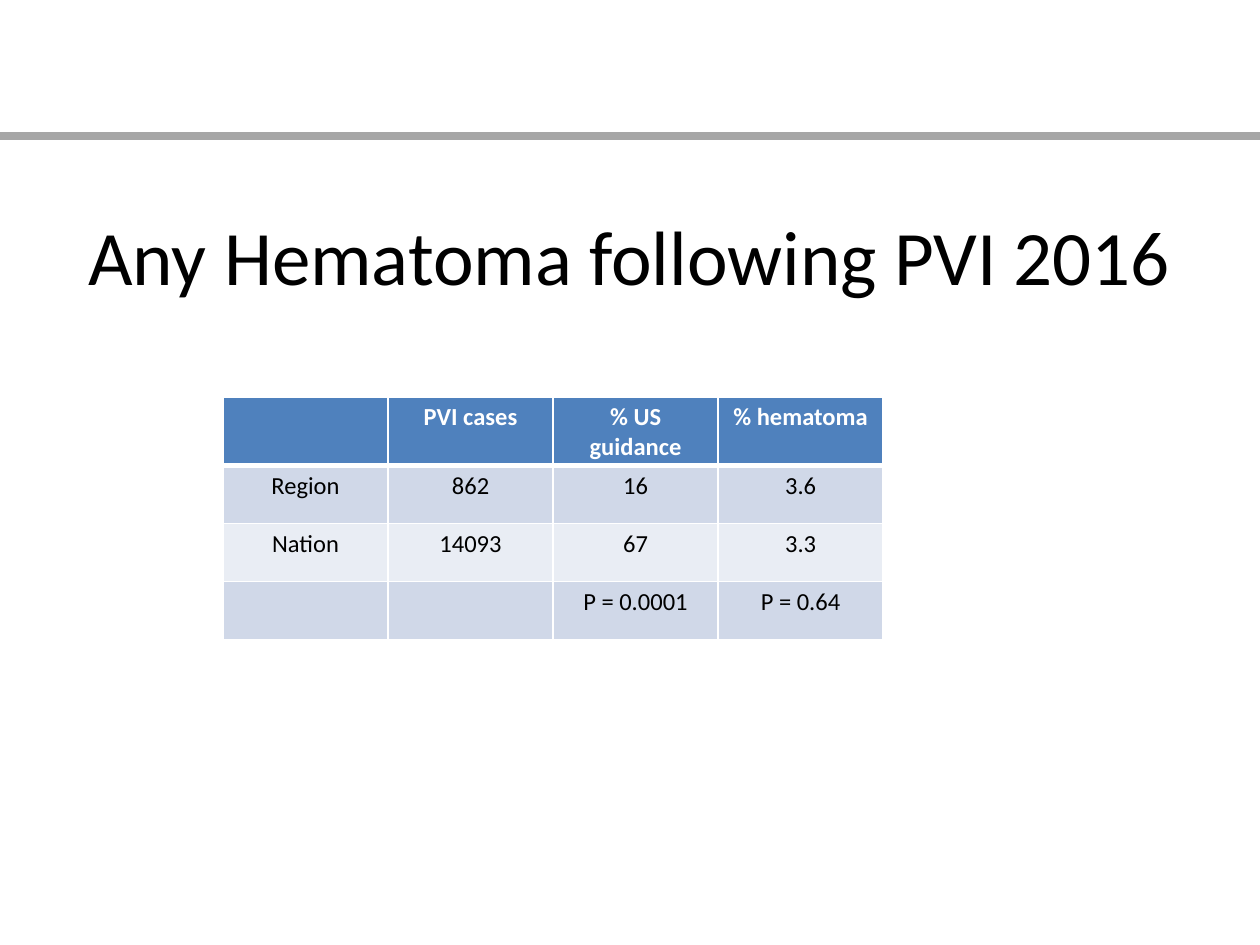
from pptx import Presentation
from pptx.dml.color import RGBColor
from pptx.enum.shapes import MSO_CONNECTOR as Line
from pptx.enum.text import MSO_ANCHOR as Anchor, PP_ALIGN as Align
from pptx.oxml.xmlchemy import OxmlElement as Element
from pptx.util import Inches, Pt

BLACK = RGBColor(0x00, 0x00, 0x00)
WHITE = RGBColor(0xFF, 0xFF, 0xFF)
GRAY = RGBColor(0xA6, 0xA6, 0xA6)
BLUE = RGBColor(0x4F, 0x81, 0xBD)
BANDS = RGBColor(0xD0, 0xD8, 0xE8), RGBColor(0xE9, 0xED, 0xF4)

TITLE = "Any Hematoma following PVI 2016"
ROWS = [
    ("", "PVI cases", "% US guidance", "% hematoma"),
    ("Region", "862", "16", "3.6"),
    ("Nation", "14093", "67", "3.3"),
    ("", "", "P = 0.0001", "P = 0.64"),
]
LEFT, TOP, COL = 1.77, 3.15, 1.31
HEIGHTS = [0.53, 0.46, 0.46, 0.46]


def write(frame, text, size=14, color=BLACK, bold=False):
    para = frame.paragraphs[0]
    para.alignment = Align.CENTER
    run = para.add_run()
    run.text = text
    font = run.font
    font.name, font.size, font.bold = "Calibri", Pt(size), bold
    font.color.rgb = color


def add_child(parent, tag, **attrs):
    child = Element(tag)
    for name, value in attrs.items():
        child.set(name, str(value))
    parent.append(child)
    return child


def set_borders(cell, top, bottom):
    """Draw white cell borders; top and bottom widths are in points."""
    props = cell._tc.get_or_add_tcPr()
    sides = [("L", 1), ("R", 1), ("T", top), ("B", bottom)]
    for spot, (side, width) in enumerate(sides):
        edge = Element(f"a:ln{side}")
        edge.set("w", str(Pt(width)))
        fill = add_child(edge, "a:solidFill")
        add_child(fill, "a:srgbClr", val=WHITE)
        props.insert(spot, edge)


def add_rule(slide):
    rule = slide.shapes.add_connector(
        Line.STRAIGHT, 0, Inches(1.08), Inches(10), Inches(1.08))
    rule.line.color.rgb = GRAY
    rule.line.width = Pt(5)
    add_child(rule._element.spPr, "a:effectLst")


def add_title(slide):
    box = slide.shapes.add_textbox(
        Inches(0.5), Inches(1.4), Inches(9), Inches(1.25))
    frame = box.text_frame
    frame.word_wrap = True
    frame.vertical_anchor = Anchor.MIDDLE
    write(frame, TITLE, size=44)


def add_grid(slide):
    cols = len(ROWS[0])
    table = slide.shapes.add_table(
        len(ROWS), cols, Inches(LEFT), Inches(TOP),
        Inches(COL * cols), Inches(sum(HEIGHTS))).table
    for col in table.columns:
        col.width = Inches(COL)
    for r, (texts, height) in enumerate(zip(ROWS, HEIGHTS)):
        table.rows[r].height = Inches(height)
        head = r == 0
        for c, text in enumerate(texts):
            cell = table.cell(r, c)
            cell.margin_left = cell.margin_right = Inches(0.07)
            cell.margin_top = cell.margin_bottom = Inches(0.04)
            cell.fill.solid()
            cell.fill.fore_color.rgb = BLUE if head else BANDS[(r - 1) % 2]
            set_borders(cell, top=3 if r == 1 else 1, bottom=3 if head else 1)
            if text:
                write(cell.text_frame, text,
                      color=WHITE if head else BLACK, bold=head)


def main():
    deck = Presentation()
    deck.slide_width, deck.slide_height = Inches(10), Inches(7.5)
    slide = deck.slides.add_slide(deck.slide_layouts[6])
    add_rule(slide)
    add_title(slide)
    add_grid(slide)
    deck.save("out.pptx")


if __name__ == "__main__":
    main()
